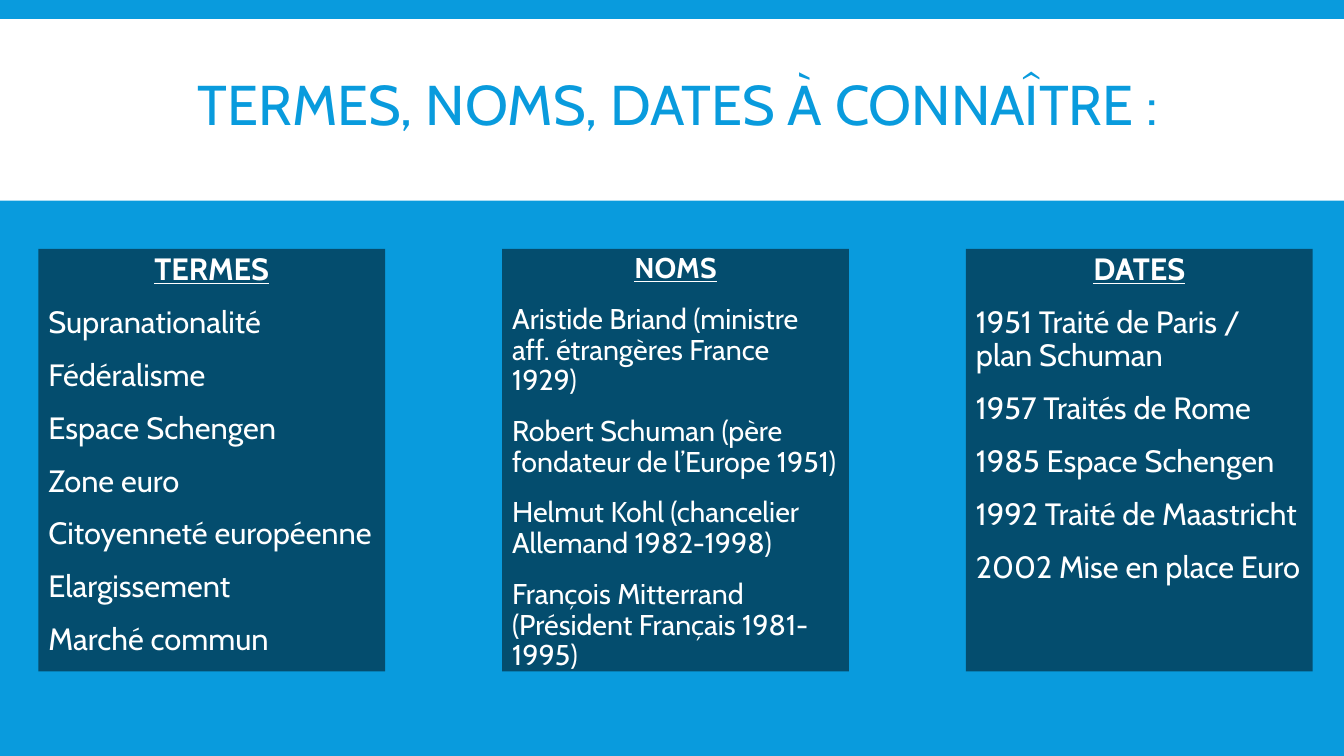
"""Build a slide of terms, names and dates to know, in three panels."""
from dataclasses import dataclass

from lxml.etree import SubElement
from pptx import Presentation
from pptx.dml.color import RGBColor
from pptx.enum.shapes import MSO_SHAPE
from pptx.enum.text import MSO_ANCHOR, MSO_AUTO_SIZE, PP_ALIGN
from pptx.oxml.ns import qn
from pptx.util import Inches, Pt


@dataclass(frozen=True)
class Theme:
    font: str = "Cabin"
    blue: RGBColor = RGBColor(0x09, 0x9B, 0xDD)
    navy: RGBColor = RGBColor(0x04, 0x4D, 0x6E)
    white: RGBColor = RGBColor(0xFF, 0xFF, 0xFF)
    title_size: float = 40
    panel_size: float = 22
    dense_size: float = 20.4


@dataclass(frozen=True)
class Panel:
    heading: str
    items: tuple[str, ...]
    size: float


THEME = Theme()
COMPARISON_LAYOUT = 4
PANEL_LEFT, PANEL_STEP = 0.38, 4.6
PANELS = (
    Panel("TERMES", ("Supranationalité", "Fédéralisme", "Espace Schengen", "Zone euro",
                     "Citoyenneté européenne", "Elargissement", "Marché commun"),
          THEME.panel_size),
    Panel("NOMS", ("Aristide Briand (ministre aff. étrangères France 1929)",
                   "Robert Schuman (père fondateur de l’Europe 1951)",
                   "Helmut Kohl (chancelier Allemand 1982-1998)",
                   "François Mitterrand (Président Français 1981-1995)"),
          THEME.dense_size),
    Panel("DATES", ("1951 Traité de Paris / plan Schuman", "1957 Traités de Rome",
                    "1985 Espace Schengen", "1992 Traité de Maastricht",
                    "2002 Mise en place Euro"),
          THEME.panel_size),
)


def apply(target, values: dict) -> None:
    """Set every attribute named in values on target."""
    for name, value in values.items():
        setattr(target, name, value)


def place(shape, left: float, top: float, width: float, height: float) -> None:
    """Move and size a shape, in inches."""
    apply(shape, {"left": Inches(left), "top": Inches(top),
                  "width": Inches(width), "height": Inches(height)})


def paint_font(font, size: float, color: RGBColor, bold: bool = False) -> None:
    """Format a font; bold text is also underlined."""
    apply(font, {"name": THEME.font, "size": Pt(size), "bold": bold, "underline": bold})
    font.color.rgb = color


def draw_band(page) -> None:
    """Draw the white band behind the title."""
    band = page.shapes.add_shape(MSO_SHAPE.RECTANGLE, 0, Inches(0.19), Inches(13.33), Inches(1.8))
    band.shadow.inherit = False
    band.fill.solid()
    band.fill.fore_color.rgb = THEME.white
    band.line.fill.background()
    page.shapes.element.insert(2, band.element)


def draw_title(page, text: str) -> None:
    """Fill the title placeholder."""
    box = page.shapes.title
    place(box, 0.12, 0.35, 13.33, 1.45)
    apply(box.text_frame, {"vertical_anchor": MSO_ANCHOR.MIDDLE, "word_wrap": True,
                           "auto_size": MSO_AUTO_SIZE.NONE})
    para = box.text_frame.paragraphs[0]
    apply(para, {"alignment": PP_ALIGN.CENTER, "line_spacing": 0.85})
    span = para.add_run()
    span.text = text
    paint_font(span.font, THEME.title_size, THEME.blue)


def draw_panel(box, panel: Panel, left: float) -> None:
    """Fill a body placeholder with a heading and its list."""
    place(box, left, 2.47, 3.44, 4.19)
    box.fill.solid()
    box.fill.fore_color.rgb = THEME.navy
    frame = box.text_frame
    apply(frame, {"vertical_anchor": MSO_ANCHOR.TOP, "word_wrap": True,
                  "auto_size": MSO_AUTO_SIZE.NONE})
    for index, text in enumerate((panel.heading, *panel.items)):
        is_heading = index == 0
        para = frame.paragraphs[0] if is_heading else frame.add_paragraph()
        properties = para._p.get_or_add_pPr()
        properties.set("marL", "0")
        properties.set("indent", "0")
        SubElement(properties, qn("a:buNone"))
        apply(para, {"alignment": PP_ALIGN.CENTER if is_heading else PP_ALIGN.LEFT,
                     "line_spacing": 0.9, "space_before": Pt(0 if is_heading else 12),
                     "space_after": Pt(2)})
        span = para.add_run()
        span.text = text
        paint_font(span.font, panel.size, THEME.white, bold=is_heading)


def main() -> None:
    """Build and save the deck."""
    deck = Presentation()
    apply(deck, {"slide_width": Inches(13.33), "slide_height": Inches(7.5)})
    page = deck.slides.add_slide(deck.slide_layouts[COMPARISON_LAYOUT])
    page.background.fill.solid()
    page.background.fill.fore_color.rgb = THEME.blue
    draw_title(page, "TERMES, NOMS, DATES À CONNAÎTRE : ")
    *bodies, spare = list(page.placeholders)[1:]
    for column, (box, panel) in enumerate(zip(bodies, PANELS)):
        draw_panel(box, panel, PANEL_LEFT + column * PANEL_STEP)
    spare.element.getparent().remove(spare.element)
    draw_band(page)
    deck.save("out.pptx")


if __name__ == "__main__":
    main()
